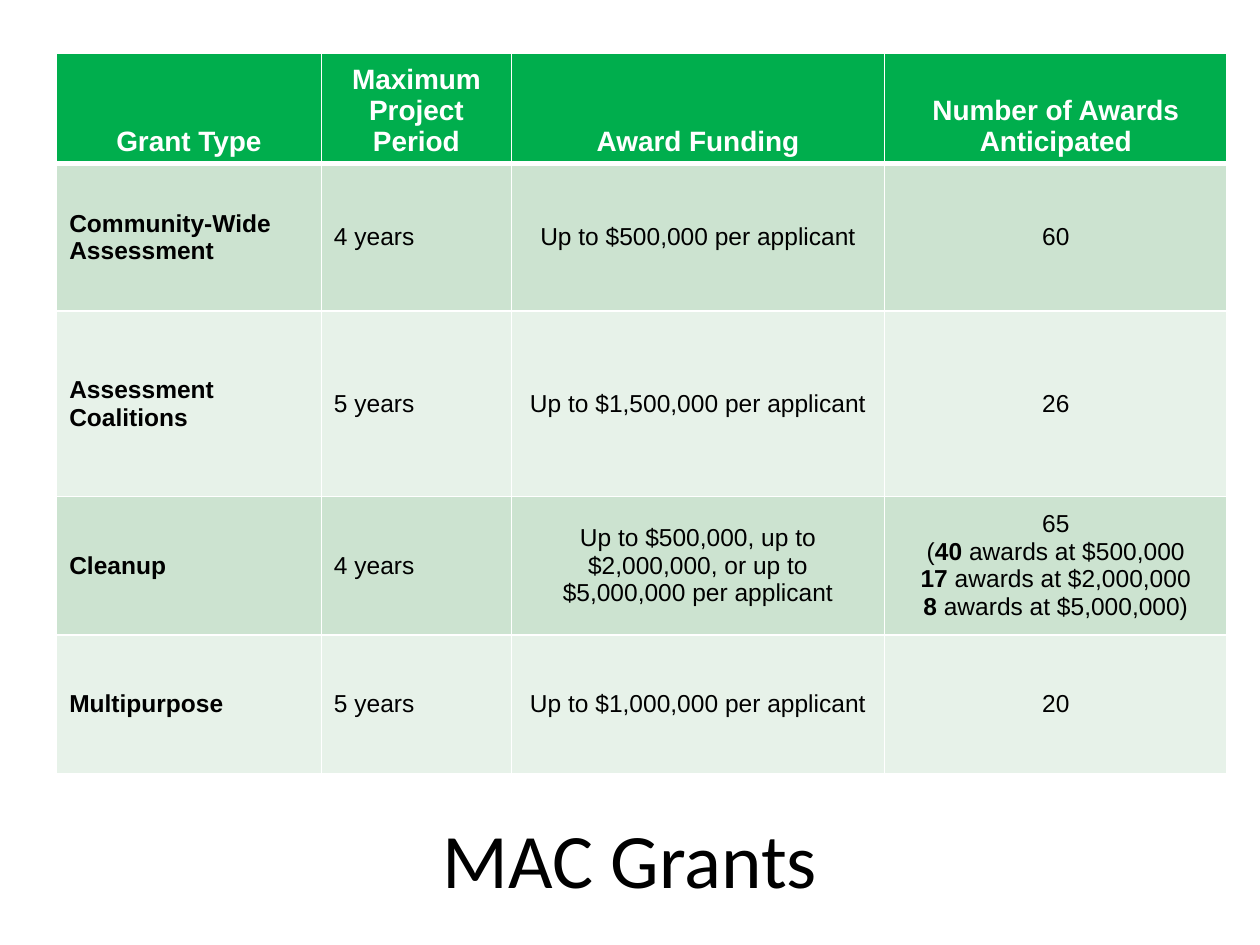
import pptx
import pptx.dml.color
import pptx.enum.text
import pptx.oxml
import pptx.oxml.ns
import pptx.util
from pptx.util import Inches

ALIGN = pptx.enum.text.PP_ALIGN
ANCHOR = pptx.enum.text.MSO_ANCHOR

TITLE = "MAC Grants"
HEADINGS = ["Grant Type", "Maximum Project Period", "Award Funding",
            "Number of Awards Anticipated"]
# Each cell is a list of paragraphs; asterisks enclose bold words.
GRANTS = [
    [["*Community-Wide Assessment*"], ["4 years"],
     ["Up to $500,000 per applicant"], ["60"]],
    [["*Assessment Coalitions*"], ["5 years"],
     ["Up to $1,500,000 per applicant"], ["26"]],
    [["*Cleanup*"], ["4 years"],
     ["Up to $500,000, up to $2,000,000, or up to $5,000,000 per applicant"],
     ["65", "(*40* awards at $500,000", "*17* awards at $2,000,000",
      "*8* awards at $5,000,000)"]],
    [["*Multipurpose*"], ["5 years"],
     ["Up to $1,000,000 per applicant"], ["20"]],
]
COLUMN_WIDTHS = [2.1, 1.51, 2.96, 2.72]
COLUMN_ALIGNS = [ALIGN.LEFT, ALIGN.LEFT, ALIGN.CENTER, ALIGN.CENTER]
ROW_HEIGHTS = [0.88, 1.17, 1.47, 1.1, 1.1]
HEADER_GREEN = "00AE4D"
BAND_GREENS = ["CCE3D0", "E7F2E9"]
WHITE, BLACK = "FFFFFF", "000000"


def rgb(value):
    return pptx.dml.color.RGBColor.from_string(value)


def write(frame, paragraphs, size, font="Arial", color=BLACK,
          align=ALIGN.LEFT, spacing=None):
    """Fill a text frame, setting words between asterisks in bold."""
    for index, text in enumerate(paragraphs):
        para = frame.add_paragraph() if index else frame.paragraphs[0]
        para.alignment = align
        if spacing:
            para.line_spacing = spacing
        for part, words in enumerate(text.split("*")):
            if words:
                span = para.add_run()
                span.text = words
                span.font.name = font
                span.font.size = pptx.util.Pt(size)
                span.font.bold = part % 2 == 1
                span.font.color.rgb = rgb(color)


def style_cell(cell, fill, anchor, top=1, bottom=1):
    """Give a cell its white borders (widths in points), fill and anchor."""
    properties = cell._tc.get_or_add_tcPr()
    for side, width in {"L": 1, "R": 1, "T": top, "B": bottom}.items():
        properties.append(pptx.oxml.parse_xml(
            f'<a:ln{side} {pptx.oxml.ns.nsdecls("a")} w="{pptx.util.Pt(width)}">'
            f'<a:solidFill><a:srgbClr val="{WHITE}"/></a:solidFill></a:ln{side}>'))
    cell.fill.solid()
    cell.fill.fore_color.rgb = rgb(fill)
    cell.vertical_anchor = anchor


def add_grant_table(page):
    table = page.shapes.add_table(
        len(ROW_HEIGHTS), len(COLUMN_WIDTHS), Inches(0.45), Inches(0.42),
        Inches(sum(COLUMN_WIDTHS)), Inches(sum(ROW_HEIGHTS))).table
    for column, width in zip(table.columns, COLUMN_WIDTHS):
        column.width = Inches(width)
    for row, height in zip(table.rows, ROW_HEIGHTS):
        row.height = Inches(height)

    for column, heading in enumerate(HEADINGS):
        cell = table.cell(0, column)
        style_cell(cell, HEADER_GREEN, ANCHOR.BOTTOM, bottom=3)
        write(cell.text_frame, [f"*{heading}*"], 16, color=WHITE,
              align=ALIGN.CENTER)
    for row, grant in enumerate(GRANTS, start=1):
        for column, paragraphs in enumerate(grant):
            cell = table.cell(row, column)
            style_cell(cell, BAND_GREENS[(row - 1) % 2], ANCHOR.MIDDLE,
                       top=3 if row == 1 else 1)
            write(cell.text_frame, paragraphs, 14, align=COLUMN_ALIGNS[column])


def place_title(page):
    title = page.shapes.title
    title.left, title.top = Inches(1.98), Inches(4.16)
    title.width, title.height = Inches(6.04), Inches(5.39)
    title.text_frame.word_wrap = True
    title.text_frame.vertical_anchor = ANCHOR.MIDDLE
    write(title.text_frame, [TITLE], 44, font="Calibri", align=ALIGN.CENTER,
          spacing=0.9)


def main():
    deck = pptx.Presentation()
    deck.slide_width, deck.slide_height = Inches(10), Inches(7.5)
    page = deck.slides.add_slide(deck.slide_layouts[5])
    add_grant_table(page)
    place_title(page)
    deck.save("out.pptx")


if __name__ == "__main__":
    main()
